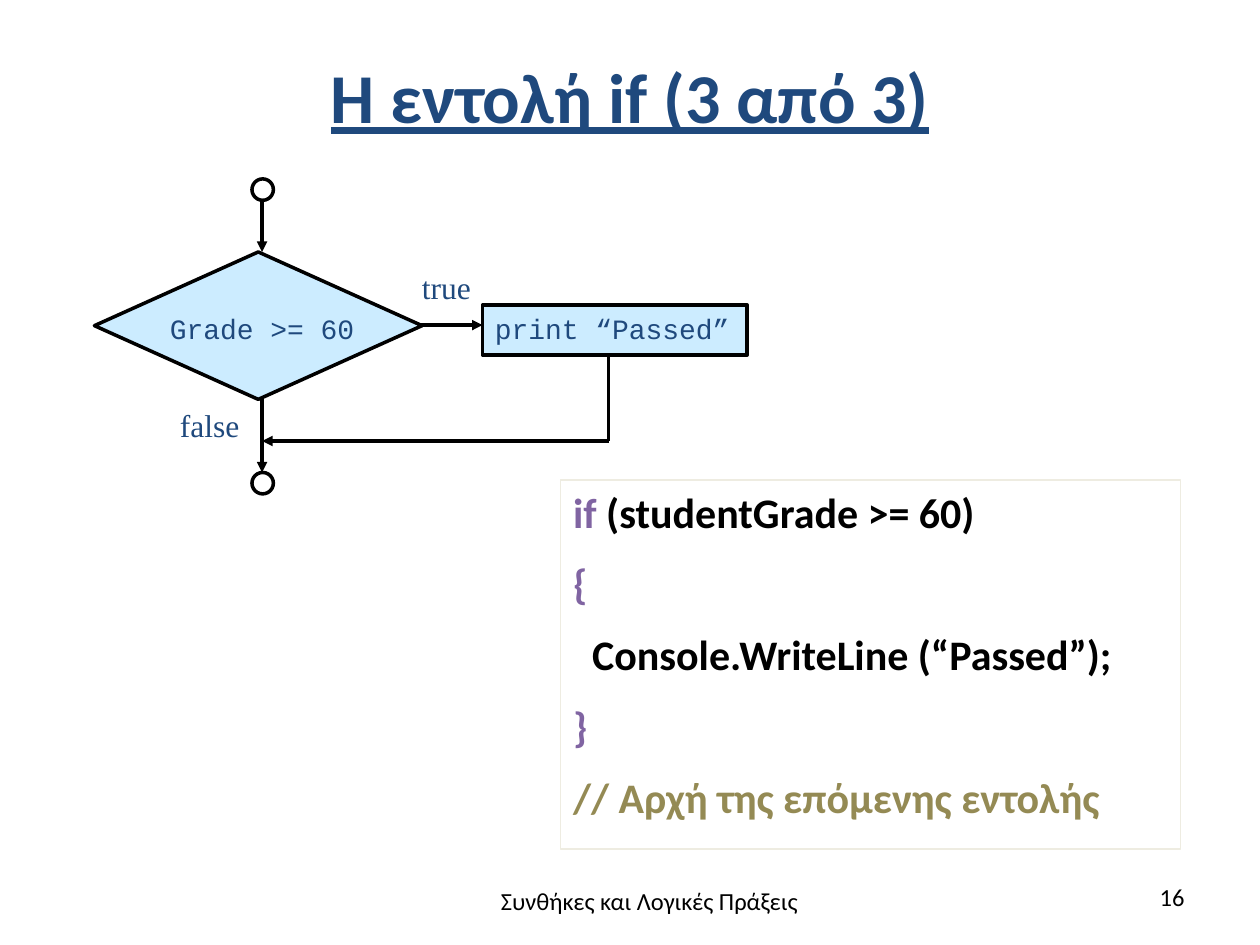
from typing import NamedTuple, Optional

from lxml.etree import SubElement
from pptx import Presentation
from pptx.dml.color import RGBColor
from pptx.enum.shapes import MSO_CONNECTOR, MSO_SHAPE
from pptx.enum.text import MSO_ANCHOR, PP_ALIGN
from pptx.oxml.ns import qn
from pptx.util import Inches, Pt

COLORS = {
    "navy": "1F497D",
    "sky": "CCECFF",
    "black": "000000",
    "white": "FFFFFF",
    "cream": "EEECE1",
    "purple": "8064A2",
    "olive": "948A54",
}


class Box(NamedTuple):
    left: float
    top: float
    width: float
    height: float


class Style(NamedTuple):
    font: str
    size: float
    color: str = "navy"
    bold: bool = False
    underline: bool = False


class Label(NamedTuple):
    text: str
    box: Box
    style: Style
    align: PP_ALIGN = PP_ALIGN.LEFT
    wrap: bool = False
    anchor: MSO_ANCHOR = MSO_ANCHOR.TOP


class Node(NamedTuple):
    kind: MSO_SHAPE
    box: Box
    fill: Optional[str]
    line: str = "black"
    weight: float = 2


class Flow(NamedTuple):
    start: tuple[float, float]
    end: tuple[float, float]
    arrow: bool = True


CODE = Style("Courier New", 16)
BRANCH = Style("Times New Roman", 18)
FOOTER = Style("Calibri", 14, "black")
TITLE = Style("Calibri", 40, bold=True, underline=True)

AXIS = 2.08
MIDDLE = 2.58
RETURN_X = 4.83
RETURN_Y = 3.5

NODES = [
    Node(MSO_SHAPE.RECTANGLE, Box(3.83, 2.42, 2.1, 0.4), "sky"),
    Node(MSO_SHAPE.DIAMOND, Box(0.75, 2, 2.6, 1.17), "sky"),
    Node(MSO_SHAPE.OVAL, Box(2, 1.42, 0.17, 0.17), "white"),
    Node(MSO_SHAPE.OVAL, Box(2, 3.75, 0.17, 0.17), "white"),
]

FLOWS = [
    Flow((AXIS, 1.58), (AXIS, 2)),
    Flow((AXIS, 3.17), (AXIS, 3.75)),
    Flow((3.33, MIDDLE), (3.83, MIDDLE)),
    Flow((RETURN_X, RETURN_Y), (AXIS, RETURN_Y)),
    Flow((RETURN_X, RETURN_Y), (RETURN_X, 2.83), arrow=False),
]

LABELS = [
    Label("Η εντολή if (3 από 3)", Box(0.5, 0.05, 9, 1.42), TITLE,
          PP_ALIGN.CENTER, True, MSO_ANCHOR.MIDDLE),
    Label("print “Passed”", Box(3.83, 2.42, 2.1, 0.4), CODE),
    Label("Grade >= 60", Box(1.25, 2.42, 1.67, 0.37), CODE),
    Label("true", Box(3.25, 2.08, 0.59, 0.4), BRANCH),
    Label("false", Box(1.33, 3.17, 0.67, 0.4), BRANCH),
    Label("Συνθήκες και Λογικές Πράξεις", Box(3.41, 6.98, 3.49, 0.55), FOOTER,
          PP_ALIGN.CENTER, True),
    Label("16", Box(7.17, 6.95, 2.33, 0.4), FOOTER, PP_ALIGN.RIGHT, True),
]

LISTING = Node(MSO_SHAPE.RECTANGLE, Box(4.45, 3.81, 4.92, 2.93), None, "cream", 0.75)
LISTING_LINES = [
    [("if ", "purple"), ("(studentGrade >= 60)", "black")],
    [("{", "purple")],
    [("  Console.WriteLine (“Passed”);", "black")],
    [("}", "purple")],
    [("// Αρχή της επόμενης εντολής", "olive")],
]


def rgb(name: str) -> RGBColor:
    """Return the named colour."""
    return RGBColor.from_string(COLORS[name])


def lengths(box: Box) -> list[Inches]:
    """Return the sides of a box as lengths."""
    return [Inches(value) for value in box]


def add_node(slide, node: Node):
    """Draw one outlined shape."""
    shape = slide.shapes.add_shape(node.kind, *lengths(node.box))
    shape.shadow.inherit = False
    if node.fill:
        shape.fill.solid()
        shape.fill.fore_color.rgb = rgb(node.fill)
    else:
        shape.fill.background()
    shape.line.color.rgb = rgb(node.line)
    shape.line.width = Pt(node.weight)
    return shape


def add_flow(slide, flow: Flow) -> None:
    """Draw one line of the flowchart, with an arrowhead if asked."""
    points = [Inches(value) for value in (*flow.start, *flow.end)]
    connector = slide.shapes.add_connector(MSO_CONNECTOR.STRAIGHT, *points)
    connector.line.color.rgb = rgb("black")
    connector.line.width = Pt(2)
    if flow.arrow:
        SubElement(connector.line._get_or_add_ln(), qn("a:tailEnd"), type="triangle")
    SubElement(connector._element.spPr, qn("a:effectLst"))


def add_label(slide, label: Label) -> None:
    """Write one line of text in its own box."""
    frame = slide.shapes.add_textbox(*lengths(label.box)).text_frame
    frame.word_wrap = label.wrap
    frame.vertical_anchor = label.anchor
    paragraph = frame.paragraphs[0]
    paragraph.text = label.text
    paragraph.alignment = label.align
    font = paragraph.font
    font.name, font.size = label.style.font, Pt(label.style.size)
    font.bold, font.underline = label.style.bold, label.style.underline
    font.color.rgb = rgb(label.style.color)


def add_listing(slide) -> None:
    """Draw the framed code listing."""
    frame = add_node(slide, LISTING).text_frame
    frame.word_wrap = True
    frame.vertical_anchor = MSO_ANCHOR.TOP
    for index, pieces in enumerate(LISTING_LINES):
        paragraph = frame.add_paragraph() if index else frame.paragraphs[0]
        paragraph.alignment = PP_ALIGN.LEFT
        paragraph.space_before = Pt(12 if index else 0)
        paragraph.font.name, paragraph.font.size = "Calibri", Pt(24)
        paragraph.font.bold = True
        for text, color in pieces:
            run = paragraph.add_run()
            run.text = text
            run.font.color.rgb = rgb(color)


def main() -> None:
    """Build and save the slide."""
    presentation = Presentation()
    presentation.slide_width, presentation.slide_height = Inches(10), Inches(7.5)
    slide = presentation.slides.add_slide(presentation.slide_layouts[6])
    for node in NODES:
        add_node(slide, node)
    for flow in FLOWS:
        add_flow(slide, flow)
    for label in LABELS:
        add_label(slide, label)
    add_listing(slide)
    presentation.save("out.pptx")


if __name__ == "__main__":
    main()
